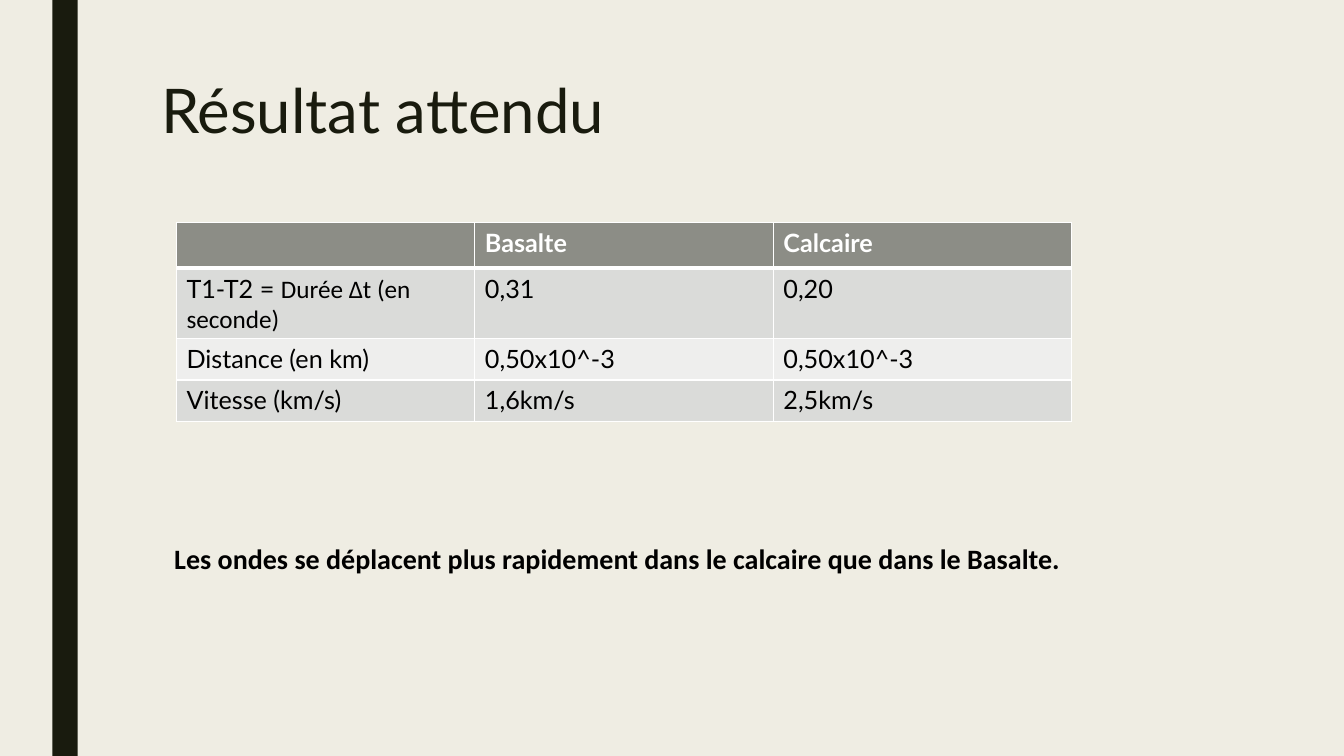
from dataclasses import dataclass

from lxml.etree import SubElement
from pptx import Presentation
from pptx.dml.color import RGBColor as RGB
from pptx.enum.shapes import MSO_SHAPE as SHAPE
from pptx.oxml.ns import qn
from pptx.util import Inches, Pt

COLORS = {
    "paper": "EFEDE3",
    "ink": "191B0E",
    "black": "000000",
    "white": "FFFFFF",
    "header": "8C8D86",
    "odd": "DADBD9",
    "even": "EEEEED",
}


@dataclass
class Run:
    text: str
    size: int = 18
    font: str = "Lato"
    color: str = "black"
    bold: bool = False


@dataclass
class TextBox:
    box: tuple[float, float, float, float]
    run: Run
    spacing: float


@dataclass
class Row:
    height: float
    fill: str
    cells: list[list[Run]]
    bottom: int = 1


def header(text: str) -> list[Run]:
    return [Run(text, color="white", bold=True)]


TEXTS = [
    TextBox((1.5, 0.75, 10.5, 1.1),
            Run("Résultat attendu", 44, color="ink"), 0.89),
    TextBox((1.63, 5.35, 10.37, 0.5),
            Run("Les ondes se déplacent plus rapidement dans le calcaire "
                "que dans le Basalte.", 20, "Calibri", bold=True), 0.94),
]

COLUMN_WIDTH = 2.96
ROWS = [
    Row(0.45, "header", [[], header("Basalte"), header("Calcaire")], 3),
    Row(0.41, "odd", [[Run("T1-T2 = "), Run("Durée Δt (en seconde)", font="Calibri")],
                      [Run("0,31")], [Run("0,20")]]),
    Row(0.41, "even", [[Run("Distance (en km)")],
                       [Run("0,50x10^-3")], [Run("0,50x10^-3")]]),
    Row(0.41, "odd", [[Run("Vitesse (km/s)")], [Run("1,6km/s")], [Run("2,5km/s")]]),
]


def rgb(name: str) -> RGB:
    return RGB.from_string(COLORS[name])


def add_run(p, run: Run) -> None:
    r = p.add_run()
    r.text = run.text
    fmt = {"size": Pt(run.size), "name": run.font, "bold": run.bold}
    for key, value in fmt.items():
        setattr(r.font, key, value)
    r.font.color.rgb = rgb(run.color)


def add_text(slide, item: TextBox) -> None:
    tf = slide.shapes.add_textbox(*map(Inches, item.box)).text_frame
    tf.word_wrap = True
    p = tf.paragraphs[0]
    p.line_spacing = item.spacing
    add_run(p, item.run)


def set_borders(cell, widths: dict[str, int]) -> None:
    props = cell._tc.get_or_add_tcPr()
    for i, (side, width) in enumerate(widths.items()):
        ln = props.makeelement(qn(f"a:{side}"), {"w": str(Pt(width))})
        fill = SubElement(ln, qn("a:solidFill"))
        SubElement(fill, qn("a:srgbClr"), val=COLORS["white"])
        props.insert(i, ln)


def add_results(slide, left: float, top: float, rows: list[Row]) -> None:
    n = len(rows[0].cells)
    height = sum(row.height for row in rows)
    table = slide.shapes.add_table(len(rows), n, Inches(left), Inches(top),
                                   Inches(n * COLUMN_WIDTH), Inches(height)).table
    for column in table.columns:
        column.width = Inches(COLUMN_WIDTH)
    above = 1
    for i, row in enumerate(rows):
        table.rows[i].height = Inches(row.height)
        for j, runs in enumerate(row.cells):
            cell = table.cell(i, j)
            cell.fill.solid()
            cell.fill.fore_color.rgb = rgb(row.fill)
            for run in runs:
                add_run(cell.text_frame.paragraphs[0], run)
            set_borders(cell, {"lnL": 1, "lnR": 1, "lnT": above, "lnB": row.bottom})
        above = row.bottom


def add_bar(slide) -> None:
    sp = slide.shapes.add_shape(SHAPE.RECTANGLE, Inches(0.52), 0,
                                Inches(0.25), Inches(7.5))
    sp.shadow.inherit = False
    sp.fill.solid()
    sp.fill.fore_color.rgb = rgb("ink")
    sp.line.fill.background()


def main() -> None:
    prs = Presentation()
    prs.slide_width, prs.slide_height = Inches(13.33), Inches(7.5)
    slide = prs.slides.add_slide(prs.slide_layouts[6])
    slide.background.fill.solid()
    slide.background.fill.fore_color.rgb = rgb("paper")
    add_bar(slide)
    for item in TEXTS:
        add_text(slide, item)
    add_results(slide, 1.75, 2.21, ROWS)
    prs.save("out.pptx")


if __name__ == "__main__":
    main()
